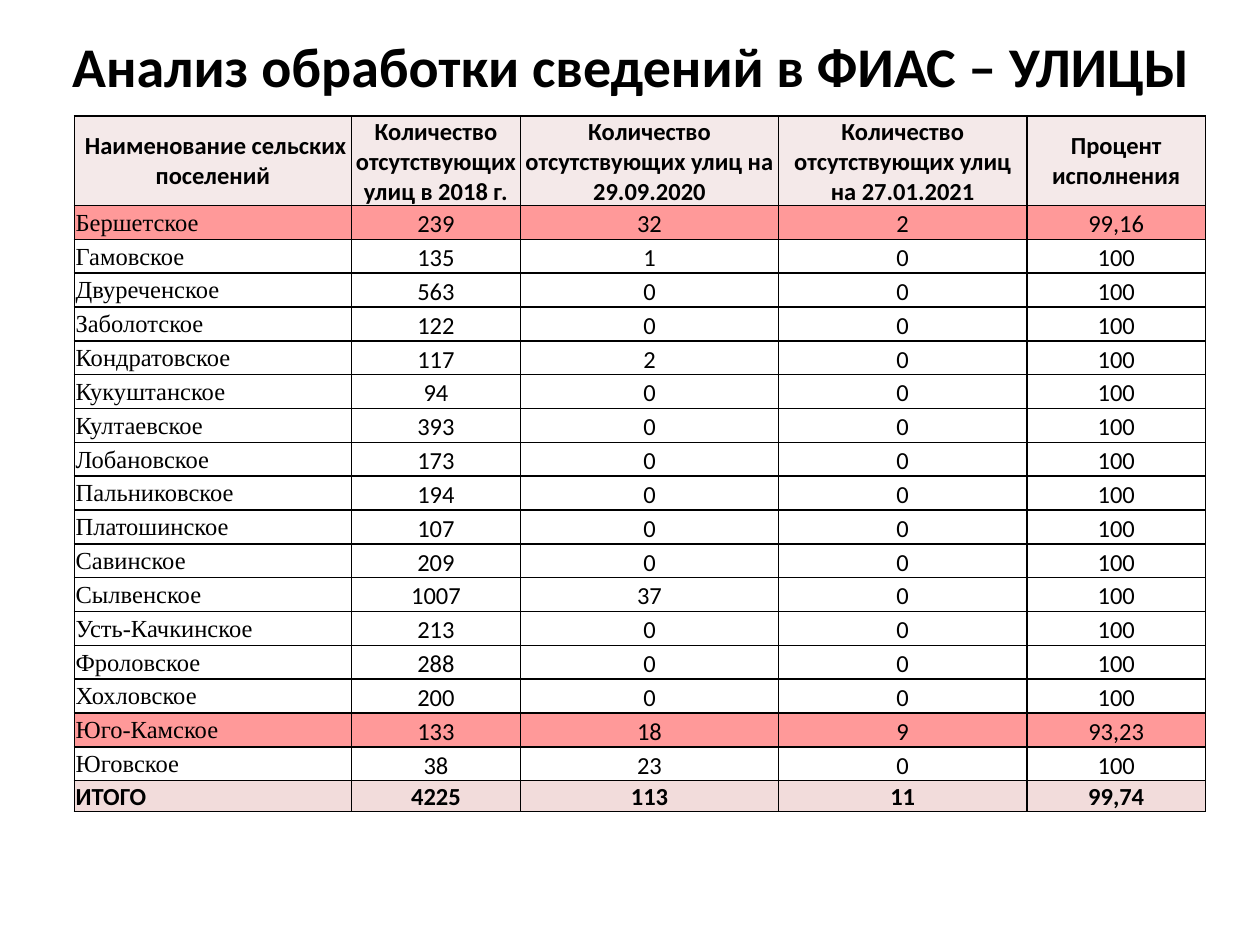
from dataclasses import dataclass

from lxml import etree
from pptx import Presentation
from pptx import util as u
from pptx.dml.color import RGBColor
from pptx.enum import text
from pptx.oxml import ns


@dataclass(frozen=True)
class Theme:
    ink: str = "000000"
    header: str = "F4E9E9"
    body: str = "FFFFFF"
    behind: str = "FF9999"
    total: str = "F2DCDB"
    font: str = "Calibri"
    name_font: str = "Times New Roman"
    title_size: int = 32
    table_size: int = 14
    border: int = 1


HEADERS = (
    " Наименование сельских поселений",
    "Количество отсутствующих улиц в 2018 г.",
    "Количество отсутствующих улиц на 29.09.2020",
    "Количество отсутствующих улиц на 27.01.2021",
    "Процент исполнения",
)
SETTLEMENTS = (
    ("Бершетское", "239", "32", "2", "99,16"),
    ("Гамовское", "135", "1", "0", "100"),
    ("Двуреченское", "563", "0", "0", "100"),
    ("Заболотское", "122", "0", "0", "100"),
    ("Кондратовское", "117", "2", "0", "100"),
    ("Кукуштанское", "94", "0", "0", "100"),
    ("Култаевское", "393", "0", "0", "100"),
    ("Лобановское", "173", "0", "0", "100"),
    ("Пальниковское", "194", "0", "0", "100"),
    ("Платошинское", "107", "0", "0", "100"),
    ("Савинское", "209", "0", "0", "100"),
    ("Сылвенское", "1007", "37", "0", "100"),
    ("Усть-Качкинское", "213", "0", "0", "100"),
    ("Фроловское", "288", "0", "0", "100"),
    ("Хохловское", "200", "0", "0", "100"),
    ("Юго-Камское", "133", "18", "9", "93,23"),
    ("Юговское", "38", "23", "0", "100"),
)
TOTAL = ("ИТОГО", "4225", "113", "11", "99,74")
COLUMN_WIDTHS = (2.2, 1.34, 2.05, 1.97, 1.42)
TABLE_HEIGHT, HEADER_HEIGHT, TOTAL_HEIGHT = 5.52, 0.71, 0.24


class SlideBuilder:
    def __init__(self, slide, theme):
        self.slide = slide
        self.theme = theme

    def style_text(self, paragraph, words, size, bold, align, font=None):
        paragraph.text = words
        paragraph.alignment = align
        paragraph.font.name = font or self.theme.font
        paragraph.font.size = u.Pt(size)
        paragraph.font.bold = bold
        paragraph.font.color.rgb = RGBColor.from_string(self.theme.ink)

    def title(self, words, left, top, width, height):
        shape = self.slide.shapes.add_textbox(
            *map(u.Inches, (left, top, width, height)))
        frame = shape.text_frame
        frame.word_wrap = True
        frame.vertical_anchor = text.MSO_ANCHOR.MIDDLE
        self.style_text(frame.paragraphs[0], words, self.theme.title_size,
                        True, text.PP_ALIGN.CENTER)

    def borders(self, cell):
        properties = cell._tc.get_or_add_tcPr()
        for index, side in enumerate(("lnL", "lnR", "lnT", "lnB")):
            line = etree.Element(ns.qn(f"a:{side}"),
                                 w=str(u.Pt(self.theme.border)))
            fill = etree.SubElement(line, ns.qn("a:solidFill"))
            etree.SubElement(fill, ns.qn("a:srgbClr"), val=self.theme.ink)
            properties.insert(index, line)

    def cell(self, cell, words, fill, bold, align, anchor, font=None):
        cell.margin_left = cell.margin_right = cell.margin_top = u.Inches(0.01)
        cell.margin_bottom = 0
        cell.vertical_anchor = anchor
        cell.fill.solid()
        cell.fill.fore_color.rgb = RGBColor.from_string(fill)
        self.style_text(cell.text_frame.paragraphs[0], words,
                        self.theme.table_size, bold, align, font)
        self.borders(cell)

    def table(self, left, top):
        theme, align, anchor = self.theme, text.PP_ALIGN, text.MSO_ANCHOR
        rows = (HEADERS, *SETTLEMENTS, TOTAL)
        last = len(rows) - 1
        body_height = (TABLE_HEIGHT - HEADER_HEIGHT - TOTAL_HEIGHT) / len(SETTLEMENTS)
        heights = (HEADER_HEIGHT, *[body_height] * len(SETTLEMENTS), TOTAL_HEIGHT)
        table = self.slide.shapes.add_table(
            len(rows), len(HEADERS), u.Inches(left), u.Inches(top),
            u.Inches(sum(COLUMN_WIDTHS)), u.Inches(TABLE_HEIGHT)).table
        for column, width in zip(table.columns, COLUMN_WIDTHS):
            column.width = u.Inches(width)
        for index, (values, height) in enumerate(zip(rows, heights)):
            table.rows[index].height = u.Inches(height)
            if index == 0:
                fill, name_anchor = theme.header, anchor.MIDDLE
            elif index == last:
                fill, name_anchor = theme.total, anchor.TOP
            else:
                fill = theme.body if values[-1] == "100" else theme.behind
                name_anchor = anchor.MIDDLE
            bold = index in (0, last)
            for number, words in enumerate(values):
                is_name = number == 0 and index > 0
                self.cell(
                    table.cell(index, number), words, fill, bold,
                    align.LEFT if is_name else align.CENTER,
                    name_anchor if is_name or index == 0 else anchor.BOTTOM,
                    theme.name_font if is_name and not bold else theme.font)


def main():
    presentation = Presentation()
    presentation.slide_width = u.Inches(10)
    presentation.slide_height = u.Inches(7.5)
    slide = presentation.slides.add_slide(presentation.slide_layouts[6])
    builder = SlideBuilder(slide, Theme())
    builder.title("Анализ обработки сведений в ФИАС – УЛИЦЫ", 0.01, 0.13, 10, 0.77)
    builder.table(0.59, 0.92)
    presentation.save("out.pptx")


if __name__ == "__main__":
    main()
